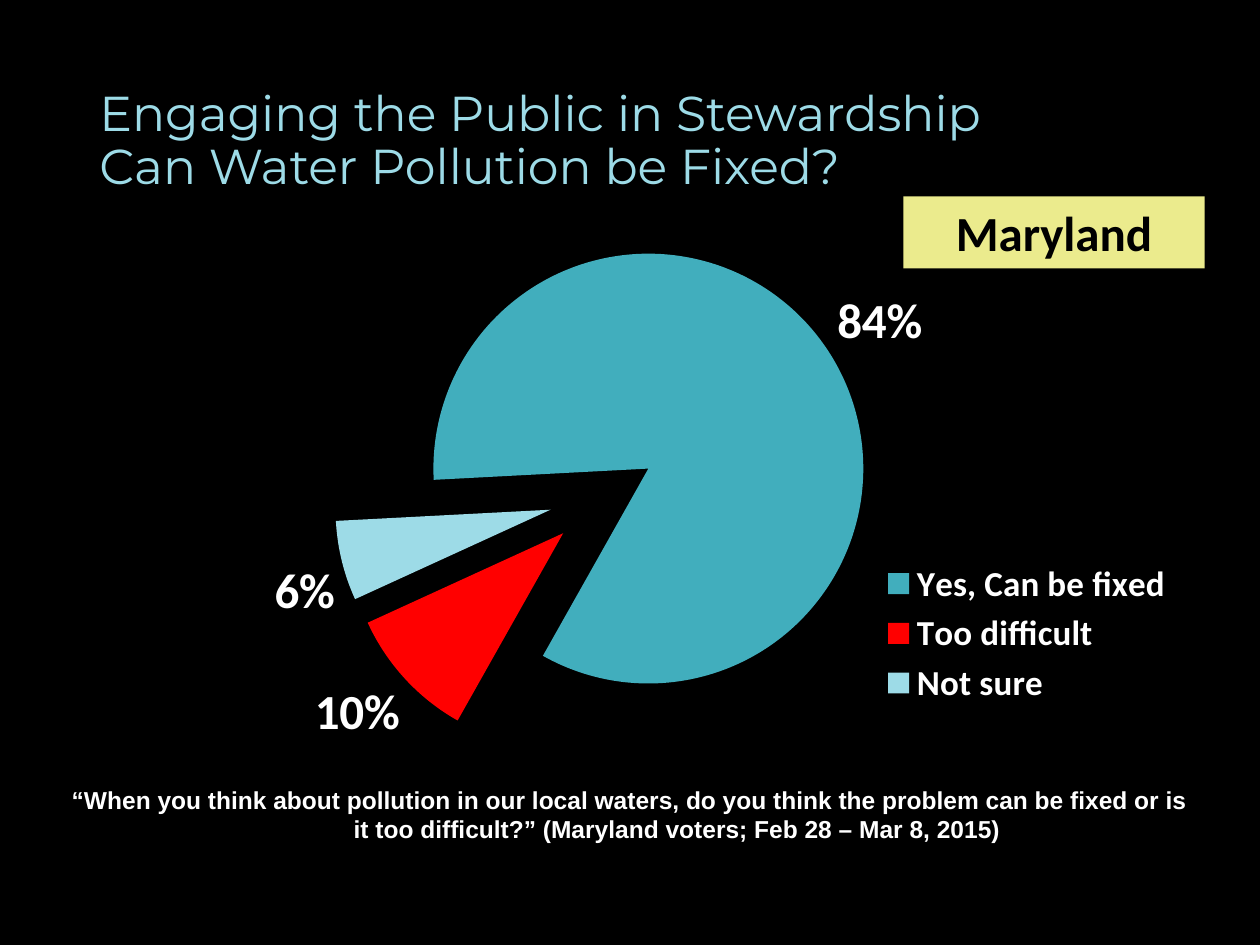
from lxml import etree
from pptx import Presentation
from pptx import util as u
from pptx.chart.data import CategoryChartData
from pptx.dml.color import RGBColor
from pptx.enum import chart as charts, shapes, text
from pptx.oxml import ns

Inches = u.Inches
COLORS = {"background": "000000", "white": "FFFFFF", "black": "000000",
          "teal": "41AEBD", "red": "FF0000", "pale": "9DDBE7", "yellow": "FFFF99"}


def style_font(font, name, size, color, bold=False):
    values = {"name": name, "size": u.Pt(size), "bold": bold}
    for key, value in values.items():
        setattr(font, key, value)
    font.color.rgb = RGBColor.from_string(COLORS[color])


def set_layout(parent, position, values):
    for old in parent.findall(ns.qn("c:layout")):
        parent.remove(old)
    layout = etree.Element(ns.qn("c:layout"))
    manual = etree.SubElement(layout, ns.qn("c:manualLayout"))
    for key, value in values.items():
        etree.SubElement(manual, ns.qn(f"c:{key}")).set("val", str(value))
    parent.insert(position, layout)


presentation = Presentation()
presentation.slide_width = Inches(10)
presentation.slide_height = Inches(7.5)
slide = presentation.slides.add_slide(presentation.slide_layouts[6])
slide.background.fill.solid()
slide.background.fill.fore_color.rgb = RGBColor.from_string(COLORS["background"])

title = slide.shapes.add_textbox(Inches(0.69), Inches(0.4), Inches(8.62), Inches(1.45))
title.text_frame.word_wrap = True
title.text_frame.vertical_anchor = text.MSO_ANCHOR.MIDDLE
paragraph = title.text_frame.paragraphs[0]
paragraph.text = "Engaging the Public in Stewardship\vCan Water Pollution be Fixed?"
paragraph.line_spacing = 0.9
for run in paragraph.runs:
    style_font(run.font, "Montserrat", 28, "pale")

chart_data = CategoryChartData(number_format="0%")
chart_data.categories = ["Yes, Can be fixed", "Too difficult", "Not sure"]
chart_data.add_series("Series 1", [0.84, 0.1, 0.06])
chart = slide.shapes.add_chart(charts.XL_CHART_TYPE.PIE, Inches(0.5), Inches(1.75),
                               Inches(9), Inches(4.75), chart_data).chart
chart.has_title = False
style_font(chart.font, "Calibri", 18, "white")
chart.has_legend = True
chart.legend.position = charts.XL_LEGEND_POSITION.RIGHT
chart.legend.include_in_layout = False
style_font(chart.legend.font, "Calibri", 20, "white", True)

plot = chart.plots[0]
plot.vary_by_categories = True
series = plot.series[0]
for index, color in enumerate(["teal", "red", "pale"]):
    fill = series.points[index].format.fill
    fill.solid()
    fill.fore_color.rgb = RGBColor.from_string(COLORS[color])

labels = series.data_labels
label_format = {"show_value": True, "show_percentage": False, "number_format": "0%",
                "number_format_is_linked": False,
                "position": charts.XL_LABEL_POSITION.OUTSIDE_END}
for key, value in label_format.items():
    setattr(labels, key, value)
style_font(labels.font, "Calibri", 28, "white", True)

explosion = etree.Element(ns.qn("c:explosion"))
explosion.set("val", "25")
series._element.find(ns.qn("c:dPt")).addprevious(explosion)
pie = plot._element
for old in pie.findall(ns.qn("c:firstSliceAng")):
    pie.remove(old)
etree.SubElement(pie, ns.qn("c:firstSliceAng")).set("val", "267")
set_layout(pie.getparent(), 0, {"layoutTarget": "inner", "xMode": "edge", "yMode": "edge",
                                "x": 0.239, "y": 0.013, "w": 0.474, "h": 0.898})
set_layout(chart.legend._element, 1, {"xMode": "edge", "yMode": "edge",
                                      "x": 0.71, "y": 0.56, "w": 0.28, "h": 0.26})

question = slide.shapes.add_textbox(Inches(0.44), Inches(6.18), Inches(9.12), Inches(0.57))
paragraph = question.text_frame.paragraphs[0]
paragraph.text = ("“When you think about pollution in our local waters, do you think the problem "
                  "can be fixed or is it too difficult?” (Maryland voters; Feb 28 – Mar 8, 2015)")
properties = paragraph._p.get_or_add_pPr()
properties.set("marL", str(Inches(0.75)))
properties.set("indent", str(Inches(-0.75)))
style_font(paragraph.runs[0].font, "Arial", 14, "white", True)

state = slide.shapes.add_shape(shapes.MSO_SHAPE.RECTANGLE, Inches(7.17), Inches(1.56),
                               Inches(2.39), Inches(0.57))
state.shadow.inherit = False
state.line.fill.background()
state.fill.solid()
state.fill.fore_color.rgb = RGBColor.from_string(COLORS["yellow"])
fill_color = state._element.spPr.find(".//" + ns.qn("a:srgbClr"))
etree.SubElement(fill_color, ns.qn("a:alpha")).set("val", "92000")
state.text_frame.text = "Maryland"
style_font(state.text_frame.paragraphs[0].runs[0].font, "Calibri", 28, "black", True)

frame_format = {"word_wrap": True, "auto_size": text.MSO_AUTO_SIZE.SHAPE_TO_FIT_TEXT,
                "vertical_anchor": text.MSO_ANCHOR.TOP}
for shape in (question, state):
    shape.text_frame.paragraphs[0].alignment = text.PP_ALIGN.CENTER
    for key, value in frame_format.items():
        setattr(shape.text_frame, key, value)

presentation.save("out.pptx")
